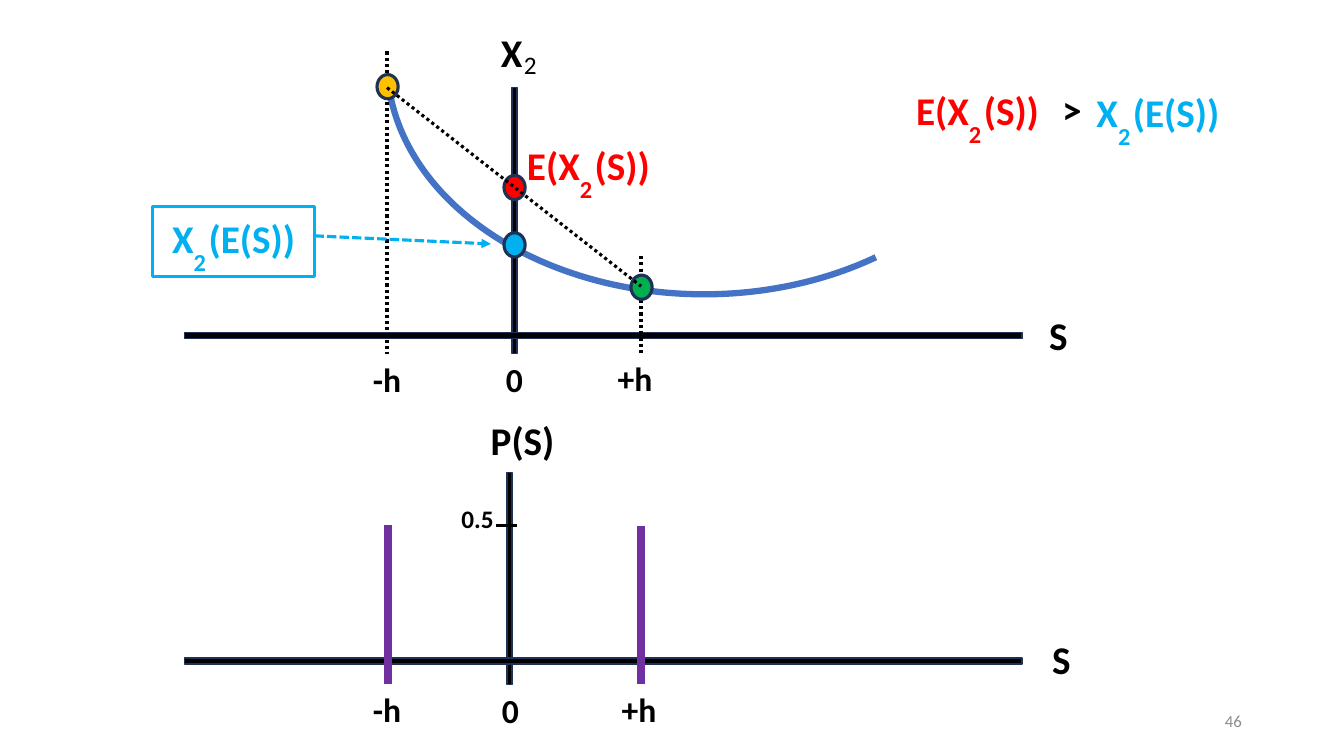
from lxml.etree import SubElement
from pptx import Presentation
from pptx.dml.color import RGBColor
from pptx.enum.dml import MSO_LINE
from pptx.enum.shapes import MSO_CONNECTOR, MSO_SHAPE
from pptx.enum.text import MSO_ANCHOR, PP_ALIGN
from pptx.oxml.ns import qn
from pptx.util import Emu, Pt

PX = 9144
HEX = {
    "black": "000000", "navy": "1E3256", "blue": "4472C4", "sky": "00B0F0",
    "red": "FF0000", "gold": "FFC000", "green": "00B050",
    "purple": "7030A0", "gray": "8C8C8C",
}
LOW, ZERO, HIGH = 384, 510, 636
AXES = [(508, 87, 5, 264), (503, 469, 5, 210), (183, 330, 831, 6), (183, 653, 831, 6)]
ARC = (384, -169, 629, 461)
BENDS = (110.99, 186.8)
FRAME = (151, 205, 161, 69)
DOT = (21, 24)
DOTS = [(LOW, 86, "gold"), (HIGH, 285, "green"), (ZERO, 243, "sky"), (ZERO, 186, "red")]
DOTTED = dict(dash=MSO_LINE.ROUND_DOT)
BAR = dict(color="purple", width=6)
LINES = [
    ((HIGH, 254, HIGH, 352), DOTTED),
    ((LOW, 51, LOW, 351), DOTTED),
    ((HIGH, 522, HIGH, 679), BAR),
    ((LOW + 1, 521, LOW + 1, 679), BAR),
    ((513, 521, 492, 521), {}),
    ((312, 234, 487, 242), dict(color="sky", dash=MSO_LINE.SQUARE_DOT, arrow=True)),
]
CHORD = (LOW, 87, HIGH, 284)
LABELS = [
    ("P(S)", (477, 408, 101, 57), {}),
    ("X", (487, 23, 42, 57), {}),
    ("2", (510, 44, 33, 40), dict(size=18, bold=False)),
    ("S", (1031, 304, 39, 57), {}),
    ("S", (1034, 625, 39, 57), {}),
    (">", (1044, 80, 40, 57), {}),
    ("0.5", (448, 494, 52, 40), dict(size=18)),
    ("46", (942, 695, 300, 40), dict(size=12, bold=False, color="gray",
                                     align=PP_ALIGN.RIGHT, anchor=MSO_ANCHOR.MIDDLE)),
]
TICKS = [
    ("-h", 360, 351, 49), ("0", 492, 351, 37), ("+h", 603, 350, 55),
    ("-h", 360, 679, 49), ("0", 488, 680, 37), ("+h", 607, 679, 67),
]
TERMS = [
    ("E(X", "(S))", (513, 133, 146, 57), "red"),
    ("X", "(E(S))", (161, 205, 152, 57), "sky"),
    ("E(X", "(S))", (899, 78, 146, 57), "red"),
    ("X", "(E(S))", (1078, 80, 210, 57), "sky"),
]

deck = Presentation()
deck.slide_width, deck.slide_height = Emu(12192000), Emu(750 * PX)
slide = deck.slides.add_slide(deck.slide_layouts[6])


def scale(box):
    return [Emu(n * PX) for n in box]


def tint(name):
    return RGBColor.from_string(HEX[name])


def text(words, box, size=28, color="black", bold=True,
         align=PP_ALIGN.LEFT, anchor=MSO_ANCHOR.TOP):
    frame = slide.shapes.add_textbox(*scale(box)).text_frame
    frame.word_wrap = True
    frame.vertical_anchor = anchor
    para = frame.paragraphs[0]
    para.alignment = align
    parts = [words] if isinstance(words, str) else words
    for spot, part in enumerate(parts):
        run = para.add_run()
        run.text = part
        font = run.font
        font.name, font.size, font.bold = "Calibri", Pt(size), bold
        font.color.rgb = tint(color)
        if spot == 1:
            font.size = Pt(size + 2)
            props = run._r.get_or_add_rPr()
            props.set("baseline", "-42000")
            props.set("spc", "180")


def shape(kind, box, fill=None, line="navy", width=1):
    item = slide.shapes.add_shape(kind, *scale(box))
    item.shadow.inherit = False
    if fill:
        item.fill.solid()
        item.fill.fore_color.rgb = tint(fill)
    else:
        item.fill.background()
    item.line.color.rgb = tint(line)
    item.line.width = Pt(width)
    return item


def stroke(ends, color="black", width=2.25, dash=None, arrow=False):
    item = slide.shapes.add_connector(MSO_CONNECTOR.STRAIGHT, *scale(ends))
    item.line.color.rgb = tint(color)
    item.line.width = Pt(width)
    if dash:
        item.line.dash_style = dash
    if arrow:
        SubElement(item.line._get_or_add_ln(), qn("a:tailEnd"), type="triangle")
    SubElement(item._element.spPr, qn("a:effectLst"))


for box in AXES:
    shape(MSO_SHAPE.RECTANGLE, box, fill="black")

curve = shape(MSO_SHAPE.ARC, ARC, line="blue", width=4.5)
curve.adjustments[0], curve.adjustments[1] = BENDS
curve._element.spPr.find(qn("a:xfrm")).set("flipV", "1")

for ends, style in LINES:
    stroke(ends, **style)

wide, high = DOT
for x, y, color in DOTS:
    shape(MSO_SHAPE.OVAL, (x - wide // 2, y - high // 2, wide, high),
          fill=color, width=2.25)
stroke(CHORD, **DOTTED)

shape(MSO_SHAPE.RECTANGLE, FRAME, line="sky", width=2.25)

for words, box, style in LABELS:
    text(words, box, **style)
for words, left, top, span in TICKS:
    text(words, (left, top, span, 50), size=24)
for head, rest, box, color in TERMS:
    text([head, "2", rest], box, color=color)

deck.save("out.pptx")
